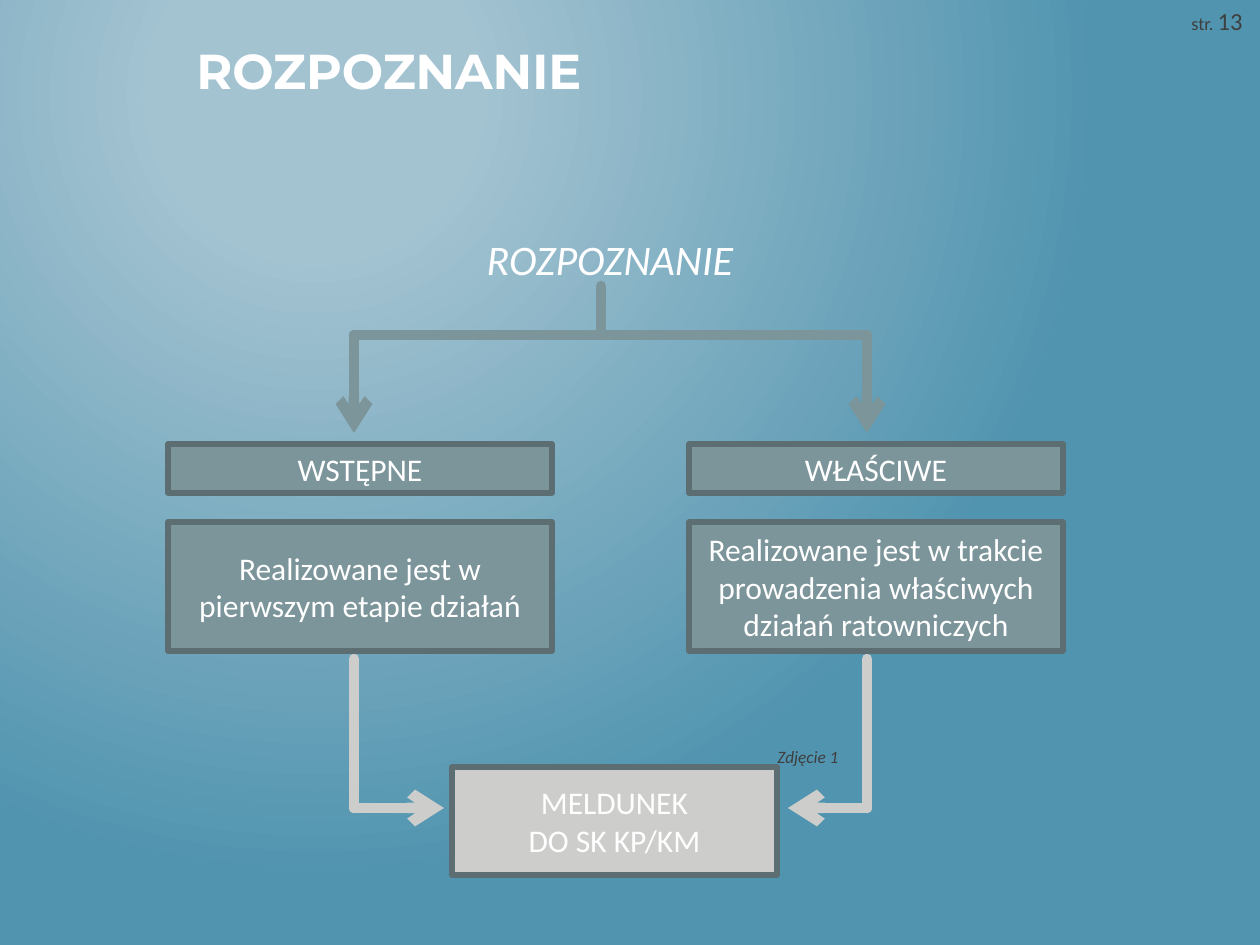
"""Build the reconnaissance flow slide."""
from lxml.etree import SubElement
from pptx import Presentation
from pptx.dml.color import RGBColor
from pptx.enum.shapes import MSO_CONNECTOR, MSO_SHAPE
from pptx.enum.text import MSO_ANCHOR, PP_ALIGN
from pptx.oxml.ns import qn
from pptx.util import Pt

SCALE = 914400 / 126
HEX = {"inner": "A3C3D1", "outer": "5194AF", "slate": "7C959A", "edge": "5C6E72",
       "pale": "CDCECB", "dark": "3F3F3F", "white": "FFFFFF"}

TITLE = "ROZPOZNANIE"
ROOT = "ROZPOZNANIE"
CAPTION = "Zdjęcie 1"
PAGE = [("str. ", 10.5), ("13", 14)]
COLUMNS = [
    (168, 384, "WSTĘPNE", "Realizowane jest w pierwszym etapie działań"),
    (689, 374, "WŁAŚCIWE",
     "Realizowane jest w trakcie prowadzenia właściwych działań ratowniczych"),
]
ROWS = [(444, 49), (522, 129)]
REPORT = "MELDUNEK\nDO SK KP/KM"
STEM, LEFT, RIGHT = 601, 354, 867
BAR, LOW = 335, 808
LINES = [
    ((STEM, 286), (STEM, BAR), "slate", False),
    ((LEFT, BAR), (RIGHT, BAR), "slate", False),
]
for side, tip in ((LEFT, 444), (RIGHT, 788)):
    LINES += [
        ((side, BAR), (side, 433), "slate", True),
        ((side, 659), (side, LOW), "pale", False),
        ((side, LOW), (tip, LOW), "pale", True),
    ]


def px(*nums):
    return [round(n * SCALE) for n in nums]


def rgb(name):
    return RGBColor.from_string(HEX[name])


def style(run, size, color="white", face="Calibri", bold=False, italic=False):
    font = run.font
    font.size, font.name, font.bold, font.italic = Pt(size), face, bold, italic
    font.color.rgb = rgb(color)


def label(slide, area, parts, align=PP_ALIGN.LEFT, wrap=True, **look):
    frame = slide.shapes.add_textbox(*px(*area)).text_frame
    frame.word_wrap = wrap
    para = frame.paragraphs[0]
    para.alignment = align
    for text, size in parts:
        run = para.add_run()
        run.text = text
        style(run, size, **look)


def box(slide, area, text, fill):
    shape = slide.shapes.add_shape(MSO_SHAPE.RECTANGLE, *px(*area))
    shape.shadow.inherit = False
    shape.fill.solid()
    shape.fill.fore_color.rgb = rgb(fill)
    shape.line.color.rgb = rgb("edge")
    shape.line.width = Pt(3)
    SubElement(shape.line._get_or_add_ln(), qn("a:round"))
    frame = shape.text_frame
    frame.word_wrap = True
    frame.vertical_anchor = MSO_ANCHOR.MIDDLE
    frame.text = text
    for para in frame.paragraphs:
        para.alignment = PP_ALIGN.CENTER
        style(para.runs[0], 18)


def link(slide, start, end, color, arrow):
    line = slide.shapes.add_connector(MSO_CONNECTOR.STRAIGHT, *px(*start, *end))
    line.line.color.rgb = rgb(color)
    line.line.width = Pt(6)
    edge = line.line._get_or_add_ln()
    edge.set("cap", "rnd")
    SubElement(edge, qn("a:round"))
    if arrow:
        SubElement(edge, qn("a:tailEnd"), type="arrow")
    SubElement(line.element.spPr, qn("a:effectLst"))


def backdrop(slide):
    fill = slide.background.fill
    fill.gradient()
    for stop, (spot, color) in zip(fill.gradient_stops, ((0.2, "inner"), (1, "outer"))):
        stop.position = spot
        stop.color.rgb = rgb(color)
    grad = slide.element.find(".//" + qn("a:gradFill"))
    grad.remove(grad.find(qn("a:lin")))
    glow = SubElement(grad, qn("a:path"), {"path": "circle"})
    SubElement(glow, qn("a:fillToRect"), l="50000", t="20000", r="100000", b="100000")


def main():
    deck = Presentation()
    deck.slide_width, deck.slide_height = px(1260, 945)
    slide = deck.slides.add_slide(deck.slide_layouts[6])
    backdrop(slide)
    label(slide, (184, 34, 983, 121), [(TITLE, 28)], face="Montserrat", bold=True)
    label(slide, (765, 740, 132, 30), [(CAPTION, 9.9)], color="dark", italic=True)
    label(slide, (29, 227, 1162, 60), [(ROOT, 24)], PP_ALIGN.CENTER, italic=True)
    label(slide, (1179, 0, 81, 34), PAGE, wrap=False, color="dark")
    for line in LINES:
        link(slide, *line)
    for left, width, *texts in COLUMNS:
        for (top, height), text in zip(ROWS, texts):
            box(slide, (left, top, width, height), text, "slate")
    box(slide, (452, 767, 325, 108), REPORT, "pale")
    deck.save("out.pptx")


if __name__ == "__main__":
    main()
